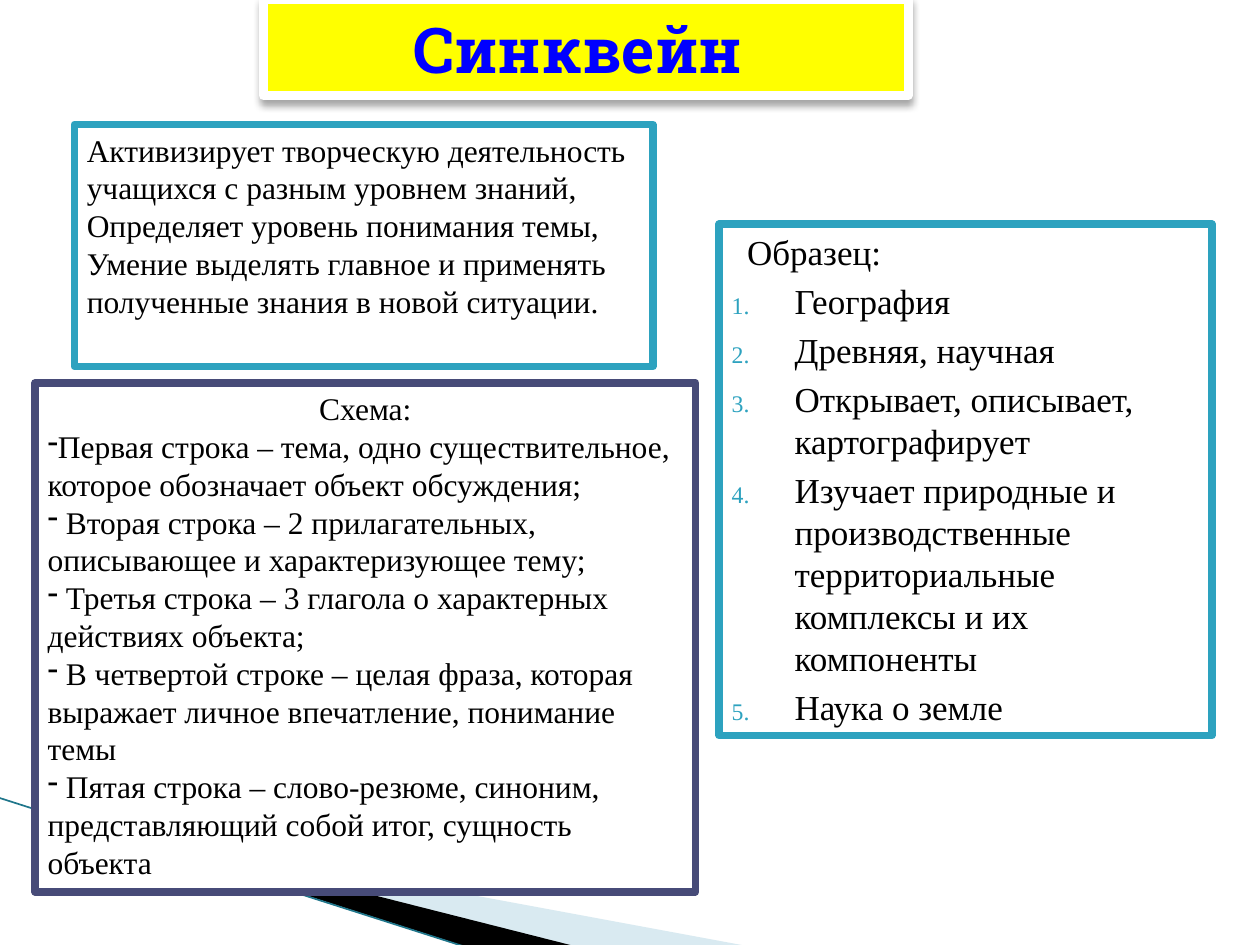
from lxml.etree import SubElement
from pptx import Presentation
from pptx.dml.color import RGBColor
from pptx.enum.shapes import MSO_CONNECTOR, MSO_SHAPE
from pptx.enum.text import MSO_ANCHOR, PP_ALIGN
from pptx.oxml.ns import qn
from pptx.util import Cm, Pt

COLOURS = {
    "white": "FFFFFF", "black": "000000", "yellow": "FFFF00", "blue": "0000FF",
    "teal": "2DA2BF", "indigo": "474B78", "pale": "A0CBDC", "edge": "1F768B",
}
SERIF = "Times New Roman"

WEDGES = [
    ("pale", 40, [(1.4, 16.54), (15.11, 19.08), (11.58, 19.08), (1.4, 16.51)]),
    ("black", 100, [(1.35, 16.48), (11.61, 19.08), (9.45, 19.1), (1.37, 16.51)]),
]
EDGE = (-0.03, 16.08, 9.42, 19.1)

NUMBER = {"marL": Cm(1.27), "indent": Cm(-1.27)}
HEADING = {"marL": Cm(1.02), "indent": Cm(-0.71)}
FLUSH = {"marL": 0, "indent": 0}

# Each paragraph is (text, bullet, indents, alignment).
TITLE = [("Синквейн ", None, FLUSH, PP_ALIGN.CENTER)]
SAMPLE = [("Образец:", None, HEADING, PP_ALIGN.LEFT)] + [
    (text, "number", NUMBER, PP_ALIGN.LEFT) for text in (
        "География",
        "Древняя, научная",
        "Открывает, описывает, картографирует",
        "Изучает природные и производственные территориальные комплексы и их компоненты",
        "Наука о земле",
    )
]
SCHEME = [("Схема:", None, FLUSH, PP_ALIGN.CENTER)] + [
    (text, "dash", FLUSH, PP_ALIGN.LEFT) for text in (
        "Первая строка – тема, одно существительное, которое обозначает объект обсуждения;",
        " Вторая строка – 2 прилагательных, описывающее и характеризующее тему;",
        " Третья строка – 3 глагола о характерных действиях объекта;",
        " В четвертой строке – целая фраза, которая выражает личное впечатление, понимание темы",
        " Пятая строка – слово-резюме, синоним, представляющий собой итог, сущность объекта",
    )
]
PURPOSE = [(text, None, FLUSH, PP_ALIGN.LEFT) for text in (
    "Активизирует творческую деятельность",
    "учащихся с разным уровнем знаний,",
    "Определяет уровень понимания темы,",
    "Умение выделять главное и применять",
    "полученные знания в новой ситуации.",
)]

# Place, fill, border, border width, space before, text colour, font, paragraphs.
BOXES = [
    ((5.31, 0, 13, 1.93), "yellow", "white", 5, 0, "blue",
     {"name": "Roboto Slab", "size": Pt(36), "bold": True}, TITLE),
    ((14.5, 4.52, 9.93, 10.31), "white", "teal", 4.33, 4, "black",
     {"name": SERIF, "size": Pt(20)}, SAMPLE),
    ((0.71, 7.72, 13.31, 10.26), "white", "indigo", 4.33, 0, "black",
     {"name": SERIF, "size": Pt(18)}, SCHEME),
    ((1.5, 2.51, 11.66, 4.88), "white", "teal", 4.33, 0, "black",
     {"name": SERIF, "size": Pt(18)}, PURPOSE),
]


def colour(name):
    return RGBColor.from_string(COLOURS[name])


def add_element(parent, tag, **attributes):
    return SubElement(parent, qn(tag), {key: str(value) for key, value in attributes.items()})


def add_wedge(page, fill, opacity, points):
    start, *rest = [(Cm(x), Cm(y)) for x, y in points]
    builder = page.shapes.build_freeform(*start)
    builder.add_line_segments(rest, close=True)
    wedge = builder.convert_to_shape()
    wedge.shadow.inherit = False
    wedge.fill.solid()
    wedge.fill.fore_color.rgb = colour(fill)
    wedge.line.fill.background()
    if opacity < 100:
        tint = wedge.fill._xPr.find(".//" + qn("a:srgbClr"))
        add_element(tint, "a:alpha", val=opacity * 1000)


def add_edge(page):
    edge = page.shapes.add_connector(MSO_CONNECTOR.STRAIGHT, *map(Cm, EDGE))
    edge.line.color.rgb = colour("edge")
    edge.line.width = Pt(0.95)
    add_element(edge._element.spPr, "a:effectLst")


def add_bullet(properties, kind):
    if kind == "number":
        add_element(add_element(properties, "a:buClr"), "a:srgbClr", val=COLOURS["teal"])
        add_element(properties, "a:buSzPct", val=68000)
        add_element(properties, "a:buAutoNum", type="arabicPeriod")
    elif kind == "dash":
        add_element(properties, "a:buChar", char="-")
    else:
        add_element(properties, "a:buNone")


def add_box(page, place, fill, border, width, space, ink, font, paragraphs):
    box = page.shapes.add_shape(MSO_SHAPE.RECTANGLE, *map(Cm, place))
    box.shadow.inherit = False
    box.fill.solid()
    box.fill.fore_color.rgb = colour(fill)
    box.line.color.rgb = colour(border)
    box.line.width = Pt(width)
    frame = box.text_frame
    frame.word_wrap = True
    frame.vertical_anchor = MSO_ANCHOR.TOP
    for index, (text, bullet, indents, alignment) in enumerate(paragraphs):
        para = frame.add_paragraph() if index else frame.paragraphs[0]
        properties = para._p.get_or_add_pPr()
        for key, value in indents.items():
            properties.set(key, str(int(value)))
        add_bullet(properties, bullet)
        para.alignment = alignment
        if index and space:
            para.space_before = Pt(space)
        span = para.add_run()
        span.text = text
        for key, value in font.items():
            setattr(span.font, key, value)
        span.font.color.rgb = colour(ink)
    return box


def add_drop_shadow(box):
    effects = box._element.spPr.find(qn("a:effectLst"))
    shadow = add_element(effects, "a:outerShdw", blurRad=Pt(4), dist=Pt(3),
                         dir=90 * 60000, algn="tl", rotWithShape=0)
    tint = add_element(shadow, "a:srgbClr", val=COLOURS["black"])
    add_element(tint, "a:alpha", val=35000)


def main():
    deck = Presentation()
    deck.slide_width, deck.slide_height = Cm(25.4), Cm(19.05)
    page = deck.slides.add_slide(deck.slide_layouts[6])
    for wedge in WEDGES:
        add_wedge(page, *wedge)
    add_edge(page)
    title, *_ = [add_box(page, *box) for box in BOXES]
    title.text_frame.vertical_anchor = MSO_ANCHOR.MIDDLE
    add_drop_shadow(title)
    deck.save("out.pptx")


if __name__ == "__main__":
    main()
